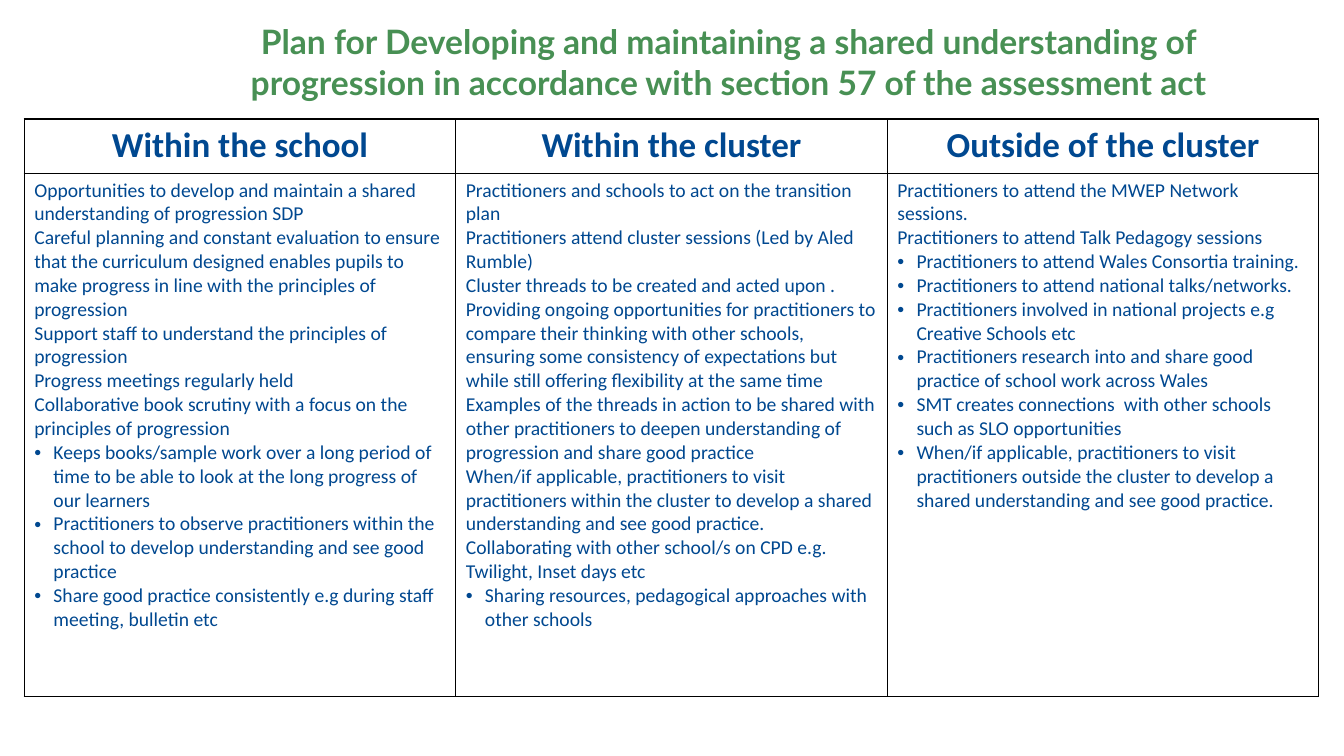
from collections import namedtuple
from lxml.etree import SubElement
from pptx import Presentation
from pptx.dml.color import RGBColor
from pptx.enum.text import MSO_ANCHOR, MSO_AUTO_SIZE, PP_ALIGN
from pptx.oxml.ns import qn
from pptx.util import Inches, Pt

Theme = namedtuple("Theme", "green blue white line title head body")
theme = Theme(
    green=RGBColor(0x48, 0x90, 0x54),
    blue=RGBColor(0x00, 0x48, 0x90),
    white=RGBColor(0xFF, 0xFF, 0xFF),
    line="000000",
    title=24,
    head=25,
    body=14,
)

plan = [
    ("Within the school", [
        "Opportunities to develop and maintain a shared understanding of progression SDP",
        "Careful planning and constant evaluation to ensure that the curriculum designed enables pupils to make progress in line with the principles of progression",
        "Support staff to understand the principles of progression",
        "Progress meetings regularly held",
        "Collaborative book scrutiny with a focus on the principles of progression",
    ], [
        "Keeps books/sample work over a long period of time to be able to look at the long progress of our learners",
        "Practitioners to observe practitioners within the school to develop understanding and see good practice",
        "Share good practice consistently e.g during staff meeting, bulletin etc",
    ]),
    ("Within the cluster", [
        "Practitioners and schools to act on the transition plan",
        "Practitioners attend cluster sessions (Led by Aled Rumble)",
        "Cluster threads to be created and acted upon .",
        "Providing ongoing opportunities for practitioners to compare their thinking with other schools, ensuring some consistency of expectations but while still offering flexibility at the same time",
        "Examples of the threads in action to be shared with other practitioners to deepen understanding of progression and share good practice",
        "When/if applicable, practitioners to visit practitioners within the cluster to develop a shared understanding and see good practice.",
        "Collaborating with other school/s on CPD e.g. Twilight, Inset days etc",
    ], [
        "Sharing resources, pedagogical approaches with other schools",
    ]),
    ("Outside of the cluster", [
        "Practitioners to attend the MWEP Network sessions.",
        "Practitioners to attend Talk Pedagogy sessions",
    ], [
        "Practitioners to attend Wales Consortia training.",
        "Practitioners to attend national talks/networks.",
        "Practitioners involved in national projects e.g Creative Schools etc",
        "Practitioners research into and share good practice of school work across Wales",
        "SMT creates connections  with other schools such as SLO opportunities",
        "When/if applicable, practitioners to visit practitioners outside the cluster to develop a shared understanding and see good practice.",
    ]),
]


def write(frame, text, size, color=theme.blue, face="Calibri", bold=False,
          align=PP_ALIGN.LEFT, bullet=False):
    para = frame.paragraphs[0] if not frame.text else frame.add_paragraph()
    para.alignment = align
    if bullet:
        props = para._p.get_or_add_pPr()
        props.set("marL", str(Inches(0.19)))
        props.set("indent", str(-Inches(0.19)))
        SubElement(props, qn("a:buFont"), typeface="Arial")
        SubElement(props, qn("a:buChar"), char="•")
    run = para.add_run()
    run.text = text
    run.font.size = Pt(size)
    run.font.name = face
    run.font.bold = bold
    run.font.color.rgb = color


def frame_cell(cell):
    props = cell._tc.get_or_add_tcPr()
    for side in ("a:lnL", "a:lnR", "a:lnT", "a:lnB"):
        edge = SubElement(props, qn(side), w=str(Pt(1)))
        fill = SubElement(edge, qn("a:solidFill"))
        SubElement(fill, qn("a:srgbClr"), val=theme.line)
    cell.fill.solid()
    cell.fill.fore_color.rgb = theme.white


deck = Presentation()
deck.slide_width, deck.slide_height = Inches(13.33), Inches(7.5)
slide = deck.slides.add_slide(deck.slide_layouts[5])

title = slide.shapes.title
title.left, title.top = Inches(1.77), Inches(0.16)
title.width, title.height = Inches(10.91), Inches(0.91)
title.text_frame.word_wrap = True
title.text_frame.auto_size = MSO_AUTO_SIZE.NONE
title.text_frame.vertical_anchor = MSO_ANCHOR.TOP
write(
    title.text_frame,
    "Plan for Developing and maintaining a shared understanding of progression in accordance with section 57 of the assessment act",
    theme.title, color=theme.green, face="Lato", bold=True, align=PP_ALIGN.CENTER,
)

rows = [Inches(0.54), Inches(5.19)]
wide = Inches(4.28)
table = slide.shapes.add_table(
    len(rows), len(plan), Inches(0.24), Inches(1.18), wide * len(plan), sum(rows)
).table
table.first_row = table.horz_banding = False
for row, high in zip(table.rows, rows):
    row.height = high

for col, (head, plain, points) in enumerate(plan):
    table.columns[col].width = wide
    top, body = table.cell(0, col), table.cell(1, col)
    frame_cell(top)
    frame_cell(body)
    write(top.text_frame, head, theme.head, bold=True, align=PP_ALIGN.CENTER)
    for text in plain:
        write(body.text_frame, text, theme.body)
    for text in points:
        write(body.text_frame, text, theme.body, bullet=True)

deck.save("out.pptx")
